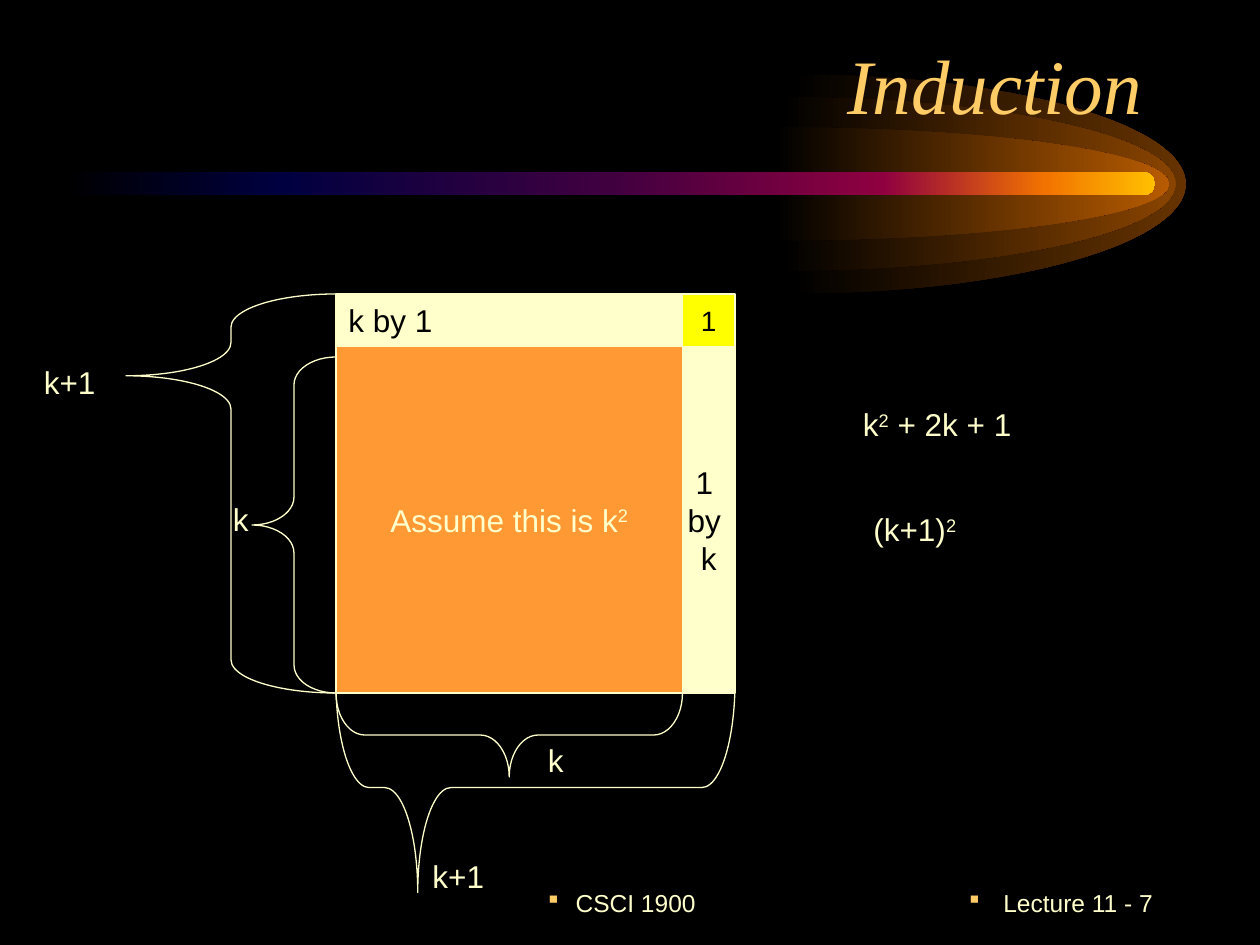
from dataclasses import dataclass

from lxml import etree
from pptx import Presentation
from pptx import util as u
from pptx.dml.color import RGBColor
from pptx.enum import shapes, text
from pptx.oxml import ns


@dataclass(frozen=True)
class Theme:
    sans: str = "Arial"
    serif: str = "Times New Roman"
    back: str = "000000"
    dark: str = "000000"
    cream: str = "FFFFCC"
    gold: str = "FFCC66"
    orange: str = "FF9933"
    yellow: str = "FFFF00"
    head: int = 44
    body: int = 18
    small: int = 16
    foot: int = 14
    rule: float = 0.75


T = Theme()
UNIT = u.Inches(1) / 12
MID = text.MSO_ANCHOR.MIDDLE
LEFT, CENTER, RIGHT = text.PP_ALIGN.LEFT, text.PP_ALIGN.CENTER, text.PP_ALIGN.RIGHT


def color(code):
    return RGBColor.from_string(code)


def grid(*cells):
    return [u.Emu(round(cell * UNIT)) for cell in cells]


def write(frame, words, size=T.body, ink=T.cream, align=LEFT, face=T.sans):
    for i, line in enumerate(words.split("\n")):
        para = frame.add_paragraph() if i else frame.paragraphs[0]
        para.alignment = align
        para.font.name, para.font.size = face, u.Pt(size)
        para.font.color.rgb = color(ink)
        for j, part in enumerate(filter(None, line.split("^"))):
            run = para.add_run()
            run.text = part
            if j % 2:
                run._r.get_or_add_rPr().set("baseline", "30000")


def label(slide, box, words, **style):
    frame = slide.shapes.add_textbox(*grid(*box)).text_frame
    frame.word_wrap = True
    write(frame, words, **style)
    return frame


def footer(slide, box, words, align, inset=0):
    frame = label(slide, box, words, size=T.foot, align=align)
    frame.vertical_anchor = MID
    props = frame.paragraphs[0]._p.get_or_add_pPr()
    indent = u.Inches(0.22)
    props.set("marL", str(indent))
    props.set("marR", str(u.Inches(inset)))
    props.set("indent", str(-indent))
    tint = etree.Element(ns.qn("a:buClr"))
    etree.SubElement(tint, ns.qn("a:srgbClr"), val=T.gold)
    marks = [
        tint,
        etree.Element(ns.qn("a:buSzPct"), val="100000"),
        etree.Element(ns.qn("a:buFont"), typeface="Wingdings"),
        etree.Element(ns.qn("a:buChar"), char="§"),
    ]
    for i, mark in enumerate(marks):
        props.insert(i, mark)


def tile(slide, box, fill, words, **style):
    shape = slide.shapes.add_shape(shapes.MSO_SHAPE.RECTANGLE, *grid(*box))
    shape.shadow.inherit = False
    shape.fill.solid()
    shape.fill.fore_color.rgb = color(fill)
    shape.line.color.rgb = color(T.cream)
    shape.line.width = u.Pt(T.rule)
    shape.text_frame.word_wrap = False
    shape.text_frame.vertical_anchor = MID
    write(shape.text_frame, words, **style)


def brace(slide, box, curl, tip=0.5, turn=0):
    shape = slide.shapes.add_shape(shapes.MSO_SHAPE.LEFT_BRACE, *grid(*box))
    shape.shadow.inherit = False
    shape.fill.background()
    shape.line.color.rgb = color(T.cream)
    shape.line.width = u.Pt(T.rule)
    shape.adjustments[0], shape.adjustments[1] = curl, tip
    shape.rotation = turn


def blend(shape, stops):
    shape.shadow.inherit = False
    shape.line.fill.background()
    shape.fill.gradient()
    shape.fill.gradient_angle = 0
    ramp = shape._element.spPr.find(".//" + ns.qn("a:gsLst"))
    for stop in list(ramp):
        ramp.remove(stop)
    for place, code in stops:
        stop = etree.SubElement(ramp, ns.qn("a:gs"), pos=str(place * 1000))
        etree.SubElement(stop, ns.qn("a:srgbClr"), val=code)


def bend(line, points):
    curve = etree.Element(ns.qn("a:cubicBezTo"))
    for x, y in points:
        etree.SubElement(curve, ns.qn("a:pt"), x=str(round(x)), y=str(round(y)))
    line.getparent().replace(line, curve)


def glow(slide, left, high, code):
    wide, high, mid = u.Inches(3.13), u.Inches(high), u.Inches(1.46)
    left = u.Inches(left)
    path = slide.shapes.build_freeform(left, mid - high)
    path.add_line_segments([(left + wide, mid), (left, mid + high)], close=True)
    shape = path.convert_to_shape()
    upper, lower = shape._element.findall(".//" + ns.qn("a:lnTo"))[:2]
    pull = 0.55
    bend(upper, [(wide * pull, 0), (wide, high * (1 - pull)), (wide, high)])
    bend(lower, [(wide, high * (1 + pull)), (wide * pull, high * 2), (0, high * 2)])
    blend(shape, [(0, T.back), (100, code)])


def comet(slide):
    for left, high, code in [
        (6.28, 0.87, "663300"),
        (6.2, 0.69, "894400"),
        (6.15, 0.45, "B75B00"),
    ]:
        glow(slide, left, high, code)
    bar = slide.shapes.add_shape(
        shapes.MSO_SHAPE.ROUNDED_RECTANGLE, *grid(6, 16.4, 104, 2.2)
    )
    bar.adjustments[0] = 0.5
    blend(bar, [(0, T.back), (20, "000040"), (50, "400040"),
                (75, "8F0040"), (90, "F27300"), (100, "FFBF00")])


def title(slide, box, words):
    head = slide.shapes.title
    head.left, head.top, head.width, head.height = grid(*box)
    head.text_frame.vertical_anchor = text.MSO_ANCHOR.BOTTOM
    write(head.text_frame, words, T.head, T.gold, RIGHT, T.serif)
    head.text_frame.paragraphs[0].font.italic = True
    slide.shapes._spTree.append(head._element)


def square(slide):
    left, top, side, edge = 32, 28, 33, 5
    right, low = left + side, top + edge
    tile(slide, (left, low, side, side), T.orange, "Assume this is k^2", align=CENTER)
    tile(slide, (right, low, edge, side), T.cream, "1 \nby \nk", ink=T.dark, align=CENTER)
    tile(slide, (left, top, side, edge), T.cream, "k by 1", ink=T.dark)
    tile(slide, (right, top, edge, edge), T.yellow, "1",
         size=T.small, ink=T.dark, align=CENTER)


def main():
    deck = Presentation()
    deck.slide_width, deck.slide_height = u.Inches(10), u.Inches(7.5)
    slide = deck.slides.add_slide(deck.slide_layouts[5])
    slide.background.fill.solid()
    slide.background.fill.fore_color.rgb = color(T.back)
    comet(slide)
    footer(slide, (41, 83, 38, 6), "CSCI 1900", CENTER, 0.13)
    footer(slide, (86, 83, 25, 6), " Lecture 11 - 7", RIGHT)
    title(slide, (8, 3, 102, 10), "Induction")
    square(slide)
    brace(slide, (24, 34, 8, 32), 0.333)
    label(slide, (51, 70, 5, 4.8), "k")
    label(slide, (21, 47, 5, 4.8), "k")
    brace(slide, (44.5, 53.5, 8, 33), 0.344, turn=270)
    label(slide, (40, 81, 8, 4.8), "k+1")
    brace(slide, (41, 56, 20, 38), 0.158, 0.205, 270)
    label(slide, (81, 38, 33, 4.8), "k^2^ + 2k + 1")
    brace(slide, (12, 28, 20, 38), 0.158, 0.205)
    label(slide, (3, 34, 8, 4.8), "k+1")
    label(slide, (82, 48, 20, 4.8), "(k+1)^2")
    deck.save("out.pptx")


if __name__ == "__main__":
    main()
